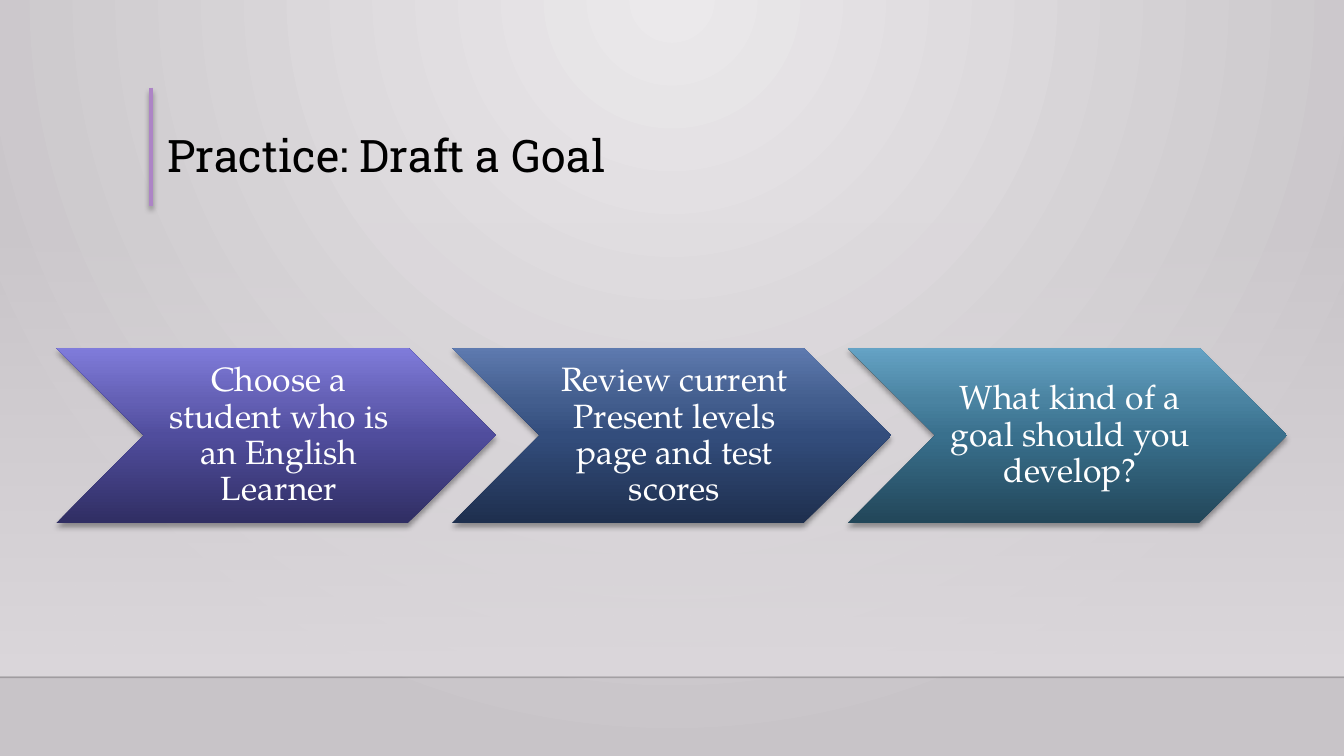
import pptx
import pptx.util
import pptx.dml.color
import pptx.enum.shapes
import pptx.enum.text
import pptx.oxml
from lxml import etree
from pptx.oxml.ns import nsdecls, qn
from pptx.util import Cm, Pt

WIDTH, HEIGHT = 33.87, 19.05
STEPS = [
    ("Choose a student who is an English Learner",
     ["302E63", "504D9D", "6460B5", "807CDB"]),
    ("Review current Present levels page and test scores",
     ["1E2F4E", "334D7C", "435E8E", "5E7AAF"]),
    ("What kind of a goal should you develop?",
     ["224659", "39708D", "4A83A1", "65A3C5"]),
]
STEP_STOPS = [0, 50, 70, 100]
STEP_LEFT, STEP_TOP, STEP_WIDTH, STEP_HEIGHT, STEP_PITCH = 1.42, 8.76, 11.07, 4.42, 9.97


def color(hex_string):
    return pptx.dml.color.RGBColor.from_string(hex_string)


def linear(degrees):
    return f'<a:lin ang="{degrees * 60000}" scaled="0"/>'


def swap_to_gradient(properties, stops, direction):
    """Replace the solid fill by a gradient of (percent, colour, opacity) stops."""
    stop_xml = "".join(
        f'<a:gs pos="{position * 1000}"><a:srgbClr val="{value}">'
        f'<a:alpha val="{opacity * 1000}"/></a:srgbClr></a:gs>'
        for position, value, opacity in stops)
    gradient = pptx.oxml.parse_xml(
        f'<a:gradFill {nsdecls("a")} rotWithShape="1"><a:gsLst>{stop_xml}</a:gsLst>'
        f'{direction}</a:gradFill>')
    properties.replace(properties.find(qn("a:solidFill")), gradient)


def set_effects(properties, shadow):
    """Give an explicit effect list, with a soft shadow below or empty."""
    effects = properties.find(qn("a:effectLst"))
    if effects is None:
        effects = etree.SubElement(properties, qn("a:effectLst"))
    if shadow:
        effects.append(pptx.oxml.parse_xml(
            f'<a:outerShdw {nsdecls("a")} blurRad="{Pt(4)}" dist="{Pt(3)}" dir="5400000" '
            'rotWithShape="0"><a:srgbClr val="000000"><a:alpha val="35000"/>'
            '</a:srgbClr></a:outerShdw>'))


class SlideBuilder:
    title_font = "Roboto Slab"
    body_font = "TeX Gyre Pagella"

    def __init__(self, presentation):
        self.slide = presentation.slides.add_slide(presentation.slide_layouts[5])

    def background(self):
        self.slide.background.fill.solid()
        properties = self.slide.element.cSld.bg.bgPr
        swap_to_gradient(
            properties, [(0, "EBE9EB", 100), (100, "C8C4C8", 100)],
            '<a:path path="circle"><a:fillToRect l="43000" t="0" r="43000" b="100000"/></a:path>')

    def gradient_shape(self, kind, left, top, width, height, stops, degrees):
        shape = self.slide.shapes.add_shape(kind, Cm(left), Cm(top), Cm(width), Cm(height))
        shape.shadow.inherit = False
        shape.line.fill.background()
        shape.fill.solid()
        swap_to_gradient(shape.element.spPr, stops, linear(degrees))
        return shape

    def line(self, start, end, hex_string, width, opacity=100, shadow=False):
        connector = self.slide.shapes.add_connector(
            pptx.enum.shapes.MSO_CONNECTOR.STRAIGHT, *map(Cm, start + end))
        connector.line.color.rgb = color(hex_string)
        connector.line.width = Pt(width)
        properties = connector.element.spPr
        if opacity < 100:
            value = properties.find(".//" + qn("a:srgbClr"))
            etree.SubElement(value, qn("a:alpha"), val=str(opacity * 1000))
        set_effects(properties, shadow)

    def set_text(self, shape, text, font, size, hex_string, alignment, anchor):
        frame = shape.text_frame
        frame.text = text
        frame.word_wrap = True
        frame.auto_size = pptx.enum.text.MSO_AUTO_SIZE.NONE
        frame.vertical_anchor = anchor
        paragraph = frame.paragraphs[0]
        paragraph.alignment = alignment
        paragraph.line_spacing = 0.9
        paragraph.font.name = font
        paragraph.font.size = Pt(size)
        paragraph.font.color.rgb = color(hex_string)
        return frame

    def title(self, text, left, top, width, height):
        title = self.slide.shapes.title
        title.left, title.top, title.width, title.height = map(Cm, (left, top, width, height))
        self.set_text(title, text, self.title_font, 32, "000000",
                      pptx.enum.text.PP_ALIGN.LEFT, pptx.enum.text.MSO_ANCHOR.BOTTOM)

    def step(self, index, text, colors):
        stops = [(position, value, 100) for position, value in zip(STEP_STOPS, colors)]
        chevron = self.gradient_shape(
            pptx.enum.shapes.MSO_SHAPE.CHEVRON, STEP_LEFT + index * STEP_PITCH, STEP_TOP,
            STEP_WIDTH, STEP_HEIGHT, stops, 270)
        set_effects(chevron.element.spPr, shadow=True)
        frame = self.set_text(chevron, text, self.body_font, 24, "FFFFFF",
                              pptx.enum.text.PP_ALIGN.CENTER, pptx.enum.text.MSO_ANCHOR.MIDDLE)
        frame.margin_left = Cm(0.25)
        frame.margin_top = frame.margin_right = frame.margin_bottom = Cm(0.1)


def main():
    presentation = pptx.Presentation()
    presentation.slide_width, presentation.slide_height = Cm(WIDTH), Cm(HEIGHT)
    builder = SlideBuilder(presentation)
    builder.background()
    builder.gradient_shape(pptx.enum.shapes.MSO_SHAPE.RECTANGLE, 0, 5.59, WIDTH, 11.43,
                           [(0, "DCD8DC", 0), (100, "DCD8DC", 100)], 90)
    builder.line((0, 17.07), (WIDTH, 17.07), "000001", 1, opacity=20)
    builder.line((3.81, 2.21), (3.81, 5.18), "AD84C6", 3, shadow=True)
    builder.title("Practice: Draft a Goal", 3.96, 1.8, 26.67, 2.92)
    for index, (text, colors) in enumerate(STEPS):
        builder.step(index, text, colors)
    presentation.save("out.pptx")


if __name__ == "__main__":
    main()
